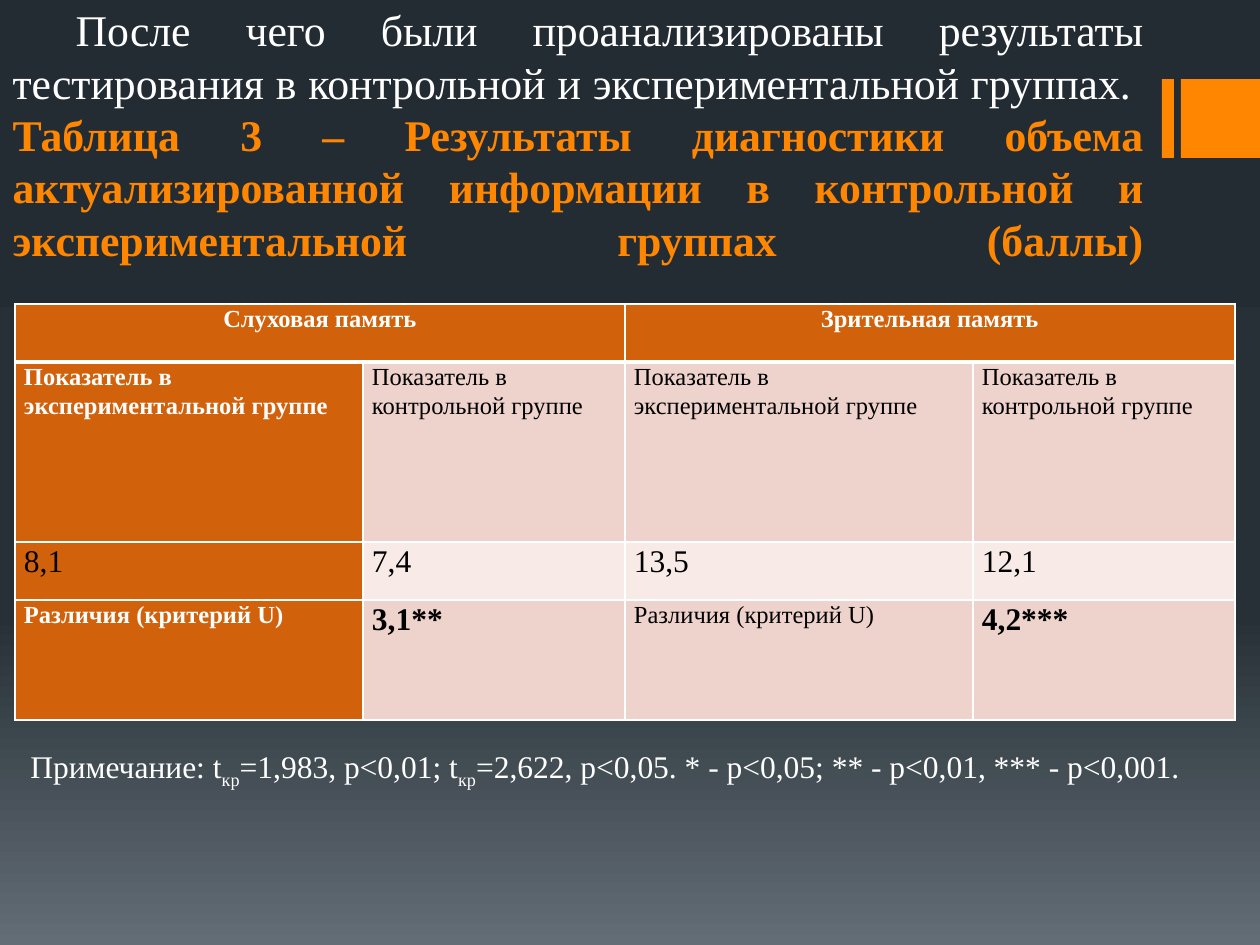
import copy

import pptx
import pptx.dml.color
import pptx.enum.shapes
import pptx.enum.text
import pptx.oxml
import pptx.oxml.ns
import pptx.util

RGB = pptx.dml.color.RGBColor
ALIGN = pptx.enum.text.PP_ALIGN
Pt = pptx.util.Pt
qn = pptx.oxml.ns.qn

WHITE = RGB(0xFF, 0xFF, 0xFF)
BLACK = RGB(0, 0, 0)
ORANGE = RGB(0xFF, 0x86, 0x00)
RUST = RGB(0xD2, 0x61, 0x0C)
PINK = RGB(0xEE, 0xD2, 0xCC)
PALE = RGB(0xF7, 0xEA, 0xE7)
FONT = "Times New Roman"

# Content
BACKGROUND = [(0, RGB(0x24, 0x2C, 0x33)), (0.65, RGB(0x27, 0x30, 0x37)),
              (1, RGB(0x63, 0x6D, 0x76))]
ACCENT_BARS = [(1162, 79, 12, 79), (1181, 79, 79, 79)]
TITLE = [
    ("После чего были проанализированы результаты тестирования "
     "в контрольной и экспериментальной группах. ", WHITE, False),
    ("Таблица 3 – Результаты диагностики объема актуализированной информации "
     "в контрольной и экспериментальной группах (баллы)", ORANGE, True),
]
EXPERIMENTAL = "Показатель в экспериментальной группе"
CONTROL = "Показатель в контрольной группе"
DIFFERENCE = "Различия (критерий U)"
HEAD = dict(size=Pt(14), bold=True, color=WHITE)
LABEL = dict(size=Pt(14), bold=False, color=BLACK)
VALUE = dict(size=Pt(18), bold=False, color=BLACK)
RESULT = dict(size=Pt(18), bold=True, color=BLACK)
# Each row: height, fill to the right of the first column, cells
ROWS = [
    (58, RUST, [("Слуховая память", HEAD), None, ("Зрительная память", HEAD), None]),
    (180, PINK, [(EXPERIMENTAL, HEAD), (CONTROL, LABEL),
                 (EXPERIMENTAL, LABEL), (CONTROL, LABEL)]),
    (58, PALE, [(text, VALUE) for text in ("8,1", "7,4", "13,5", "12,1")]),
    (120, PINK, [(DIFFERENCE, HEAD), ("3,1**", RESULT),
                 (DIFFERENCE, LABEL), ("4,2***", RESULT)]),
]
COLUMNS = [348, 262, 348, 262]
NOTE = [("Примечание: t", False), ("кр", True), ("=1,983, p<0,01; t", False),
        ("кр", True),
        ("=2,622, p<0,05. * - p<0,05; ** - p<0,01, *** - p<0,001.", False)]


def px(length):
    return pptx.util.Emu(round(length * 914400 / 126))


def place(*box):
    return [px(length) for length in box]


def set_all(target, **values):
    for name, value in values.items():
        setattr(target, name, value)


def add_run(paragraph, text, size, color, bold=False):
    run = paragraph.add_run()
    run.text = text
    set_all(run.font, name=FONT, size=size, bold=bold)
    run.font.color.rgb = color
    return run


def set_borders(cell, **widths):
    properties = cell._tc.get_or_add_tcPr()
    for index, side in enumerate("LRTB"):
        properties.insert(index, pptx.oxml.parse_xml(
            f'<a:ln{side} {pptx.oxml.ns.nsdecls("a")} w="{Pt(widths.get(side, 1))}">'
            f'<a:solidFill><a:srgbClr val="{WHITE}"/></a:solidFill></a:ln{side}>'))


def add_background(slide):
    fill = slide.background.fill
    fill.gradient()
    fill.gradient_angle = 270
    stops = next(slide.element.iter(qn("a:gsLst")))
    stops.append(copy.deepcopy(stops[-1]))
    for stop, (position, color) in zip(fill.gradient_stops, BACKGROUND):
        stop.position = position
        stop.color.rgb = color


def add_accent_bars(slide):
    for box in ACCENT_BARS:
        bar = slide.shapes.add_shape(
            pptx.enum.shapes.MSO_SHAPE.RECTANGLE, *place(*box))
        bar.fill.solid()
        bar.fill.fore_color.rgb = ORANGE
        bar.line.fill.background()
        bar.shadow.inherit = False


def fill_title(title):
    left, top, width, height = place(0, 16, 1156, 308)
    set_all(title, left=left, top=top, width=width, height=height)
    set_all(title.text_frame, word_wrap=True,
            auto_size=pptx.enum.text.MSO_AUTO_SIZE.NONE,
            vertical_anchor=pptx.enum.text.MSO_ANCHOR.BOTTOM)
    paragraph = title.text_frame.paragraphs[0]
    set_all(paragraph, alignment=ALIGN.JUSTIFY, line_spacing=Pt(30))
    paragraph._p.get_or_add_pPr().set("indent", str(px(63)))
    for text, color, bold in TITLE:
        run = add_run(paragraph, text, Pt(25), color, bold)
        # The break takes the format of the run before it
        paragraph.add_line_break()
        paragraph._p[-1].append(copy.deepcopy(run.font._element))
    end = pptx.oxml.parse_xml(
        f'<a:endParaRPr {pptx.oxml.ns.nsdecls("a")} sz="2500"/>')
    paragraph._p.append(end)


def add_results_table(slide):
    heights = [height for height, _, _ in ROWS]
    table = slide.shapes.add_table(
        len(ROWS), len(COLUMNS),
        *place(15, 304, sum(COLUMNS), sum(heights))).table
    for column, width in zip(table.columns, COLUMNS):
        column.width = px(width)
    for row, height in zip(table.rows, heights):
        row.height = px(height)
    for r, (_, row_fill, cells) in enumerate(ROWS):
        for c, content in enumerate(cells):
            cell = table.cell(r, c)
            set_all(cell, margin_left=px(9), margin_right=px(9),
                    margin_top=0, margin_bottom=0)
            cell.fill.solid()
            cell.fill.fore_color.rgb = RUST if c == 0 else row_fill
            set_borders(cell, T=3 if r == 1 else 1, B=3 if r == 0 else 1)
            if content is None:
                table.cell(r, c - 1).merge(cell)
                continue
            text, style = content
            paragraph = cell.text_frame.paragraphs[0]
            set_all(paragraph, line_spacing=1.07,
                    alignment=ALIGN.CENTER if r == 0 else ALIGN.LEFT)
            add_run(paragraph, text, **style)


def add_note(slide):
    frame = slide.shapes.add_textbox(*place(18, 741, 1221, 50)).text_frame
    frame.word_wrap = True
    for text, subscript in NOTE:
        run = add_run(frame.paragraphs[0], text, Pt(18), WHITE)
        if subscript:
            run.font._element.set("baseline", "-25000")


def main():
    presentation = pptx.Presentation()
    set_all(presentation, slide_width=px(1260), slide_height=px(945))
    slide = presentation.slides.add_slide(presentation.slide_layouts[5])
    add_background(slide)
    add_accent_bars(slide)
    fill_title(slide.shapes.title)
    add_results_table(slide)
    add_note(slide)
    presentation.save("out.pptx")


if __name__ == "__main__":
    main()
